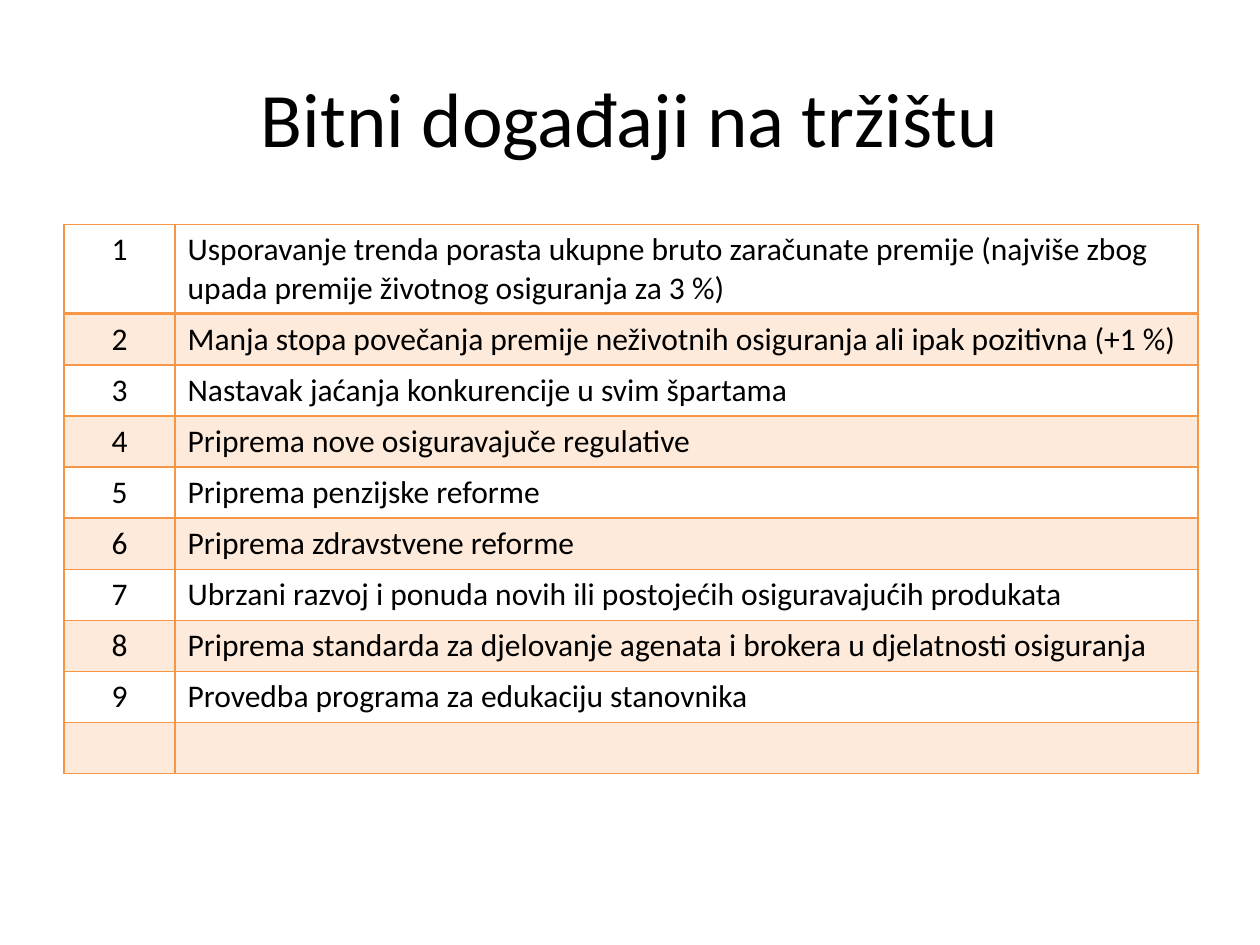
from dataclasses import dataclass

from lxml.etree import SubElement
from pptx import Presentation
from pptx.dml.color import RGBColor
from pptx.enum.text import MSO_ANCHOR, PP_ALIGN
from pptx.oxml.ns import qn
from pptx.util import Inches, Pt


@dataclass(frozen=True)
class Theme:
    font: str = "Calibri"
    ink: str = "000000"
    accent: str = "F79646"
    band_alpha: int = 20
    title_size: int = 44
    cell_size: int = 18
    line: int = 1
    head_line: int = 2


THEME = Theme()

EVENTS = [
    "Usporavanje trenda porasta ukupne bruto zaračunate premije "
    "(najviše zbog upada premije životnog osiguranja za 3 %)",
    "Manja stopa povečanja premije neživotnih osiguranja ali ipak pozitivna (+1 %)",
    "Nastavak jaćanja konkurencije u svim špartama",
    "Priprema nove osiguravajuče regulative",
    "Priprema penzijske reforme",
    "Priprema zdravstvene reforme",
    "Ubrzani razvoj i ponuda novih ili postojećih osiguravajućih produkata",
    "Priprema standarda za djelovanje agenata i brokera u djelatnosti osiguranja",
    "Provedba programa za edukaciju stanovnika",
]


def add_text(frame, text, size, align):
    para = frame.paragraphs[0]
    para.alignment = align
    run = para.add_run()
    run.text = text
    run.font.name = THEME.font
    run.font.size = Pt(size)
    run.font.color.rgb = RGBColor.from_string(THEME.ink)


def add_title(slide, text):
    title = slide.shapes.title
    title.left, title.top = Inches(0.5), Inches(0.3)
    title.width, title.height = Inches(9), Inches(1.25)
    title.text_frame.vertical_anchor = MSO_ANCHOR.MIDDLE
    add_text(title.text_frame, text, THEME.title_size, PP_ALIGN.CENTER)


def set_edge(cell, side, width):
    props = cell._tc.get_or_add_tcPr()
    edge = SubElement(props, qn(f"a:ln{side}"), w=str(Pt(width)))
    fill = SubElement(edge, qn("a:solidFill"))
    SubElement(fill, qn("a:srgbClr"), val=THEME.accent)


def fill_cell(cell, band):
    """Tint a banded cell with see-through accent, or leave it clear."""
    if not band:
        cell.fill.background()
        return
    cell.fill.solid()
    cell.fill.fore_color.rgb = RGBColor.from_string(THEME.accent)
    color = cell._tc.tcPr.find(qn("a:solidFill")).find(qn("a:srgbClr"))
    SubElement(color, qn("a:alpha"), val=str(THEME.band_alpha * 1000))


def style_cell(cell, row):
    # Neighbouring cells must agree on the heavy line under the first row.
    heavy = {(0, "B"), (1, "T")}
    for side in "LRTB":
        set_edge(cell, side, THEME.head_line if (row, side) in heavy else THEME.line)
    fill_cell(cell, row % 2 == 1)


def add_events(slide, events):
    """Number the events in a table that ends with one empty row."""
    count = len(events) + 1
    frame = slide.shapes.add_table(
        count, 2, Inches(0.51), Inches(1.78), Inches(9), Inches(4.35))
    table = frame.table
    table.first_row = table.horz_banding = False
    for col, width in zip(table.columns, (0.88, 8.12)):
        col.width = Inches(width)
    for row in table.rows:
        row.height = Inches(0.4)
    table.rows[0].height = Inches(0.7)

    for row in range(count):
        for cell in table.rows[row].cells:
            style_cell(cell, row)
    for row, event in enumerate(events):
        number, text = table.rows[row].cells
        add_text(number.text_frame, str(row + 1), THEME.cell_size, PP_ALIGN.CENTER)
        add_text(text.text_frame, event, THEME.cell_size, PP_ALIGN.LEFT)


def main():
    deck = Presentation()
    deck.slide_width, deck.slide_height = Inches(10), Inches(7.5)
    slide = deck.slides.add_slide(deck.slide_layouts[5])
    add_title(slide, "Bitni događaji na tržištu")
    add_events(slide, EVENTS)
    deck.save("out.pptx")


if __name__ == "__main__":
    main()
